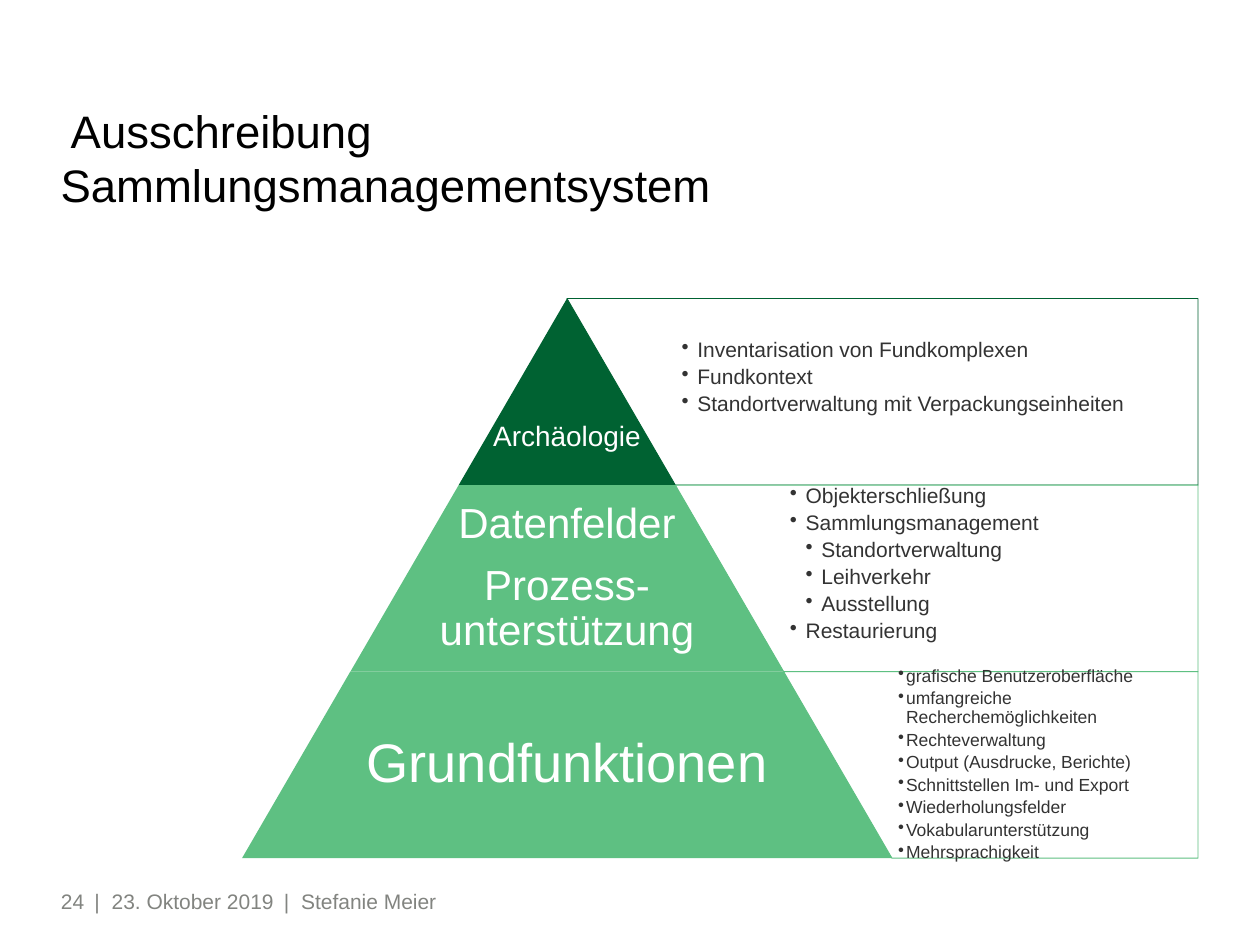
from lxml import etree
from pptx import Presentation
from pptx import util as u
from pptx.dml.color import RGBColor
from pptx.enum import shapes, text
from pptx.oxml.ns import qn

COLORS = {"black": "000000", "grey": "828480", "body": "333333",
          "white": "FFFFFF", "dark": "006232", "light": "5EC082"}
Pt = u.Pt


class SlideBuilder:
    font = "Arial"

    def __init__(self, slide):
        self.slide = slide

    def color(self, name):
        return RGBColor.from_string(COLORS[name])

    def shape(self, kind, box, fill, adjustments, line=None, rotation=0, alpha=None):
        shape = self.slide.shapes.add_shape(kind, *map(Pt, box))
        shape.shadow.inherit = False
        shape.rotation = rotation
        for index, value in enumerate(adjustments):
            shape.adjustments[index] = value
        shape.fill.solid()
        shape.fill.fore_color.rgb = self.color(fill)
        if alpha:
            fill_color = shape._element.spPr.find(qn("a:solidFill"))[0]
            etree.SubElement(fill_color, qn("a:alpha"), val=str(alpha * 1000))
        if line:
            shape.line.color.rgb = self.color(line)
            shape.line.width = Pt(0.5)
        else:
            shape.line.fill.background()

    def frame(self, box, anchor="MIDDLE", inset=0, extra_top=0, extra_bottom=0):
        frame = self.slide.shapes.add_textbox(*map(Pt, box)).text_frame
        frame.word_wrap = True
        frame.vertical_anchor = getattr(text.MSO_ANCHOR, anchor)
        frame.margin_left = frame.margin_right = Pt(inset)
        frame.margin_top = Pt(inset + extra_top)
        frame.margin_bottom = Pt(inset + extra_bottom)
        return frame

    def paragraphs(self, frame, lines, size, color, align="LEFT", spacing=None,
                   after=0, indent=0, tabs=()):
        """Each line is a (level, text) pair; an indent gives it a bullet."""
        for index, (level, words) in enumerate(lines):
            paragraph = frame.add_paragraph() if index else frame.paragraphs[0]
            paragraph.alignment = getattr(text.PP_ALIGN, align)
            paragraph.line_spacing = spacing
            paragraph.space_after = Pt(after)
            properties = paragraph._p.get_or_add_pPr()
            if indent:
                properties.set("marL", str(Pt(indent * (level + 1))))
                properties.set("indent", str(-Pt(indent)))
                etree.SubElement(properties, qn("a:buChar"), char="•")
            if tabs:
                tab_list = etree.SubElement(properties, qn("a:tabLst"))
                for position in tabs:
                    etree.SubElement(tab_list, qn("a:tab"), pos=str(Pt(position)), algn="l")
            run = paragraph.add_run()
            run.text = words
            run.font.size = Pt(size)
            run.font.name = self.font
            run.font.color.rgb = self.color(color)


# Pyramid geometry: every tier widens by one step on each side
APEX_X, TOP, TIER_HEIGHT, STEP, RIGHT = 324, 170.6, 106.6, 61.9, 684.6
SLOPE = STEP / TIER_HEIGHT

TIERS = [
    dict(color="dark", labels=["Archäologie"], label_size=16, label_share=1,
         label_drop=52, list_size=12, indent=9, list_lift=16,
         items=[(0, "Inventarisation von Fundkomplexen"), (0, "Fundkontext"),
                (0, "Standortverwaltung mit Verpackungseinheiten")]),
    dict(color="light", labels=["Datenfelder", "Prozess-unterstützung"],
         label_size=24, label_share=0.65, label_drop=0,
         list_size=12, indent=9, list_lift=16,
         items=[(0, "Objekterschließung"), (0, "Sammlungsmanagement"),
                (1, "Standortverwaltung"), (1, "Leihverkehr"),
                (1, "Ausstellung"), (0, "Restaurierung")]),
    dict(color="light", labels=["Grundfunktionen"], label_size=31,
         label_share=0.65, label_drop=0, list_size=10, indent=4.5, list_lift=0,
         items=[(0, "grafische Benutzeroberfläche"),
                (0, "umfangreiche Recherchemöglichkeiten"),
                (0, "Rechteverwaltung"), (0, "Output (Ausdrucke, Berichte)"),
                (0, "Schnittstellen Im- und Export"), (0, "Wiederholungsfelder"),
                (0, "Vokabularunterstützung"), (0, "Mehrsprachigkeit")]),
]


def add_tier(builder, index, tier):
    top = TOP + index * TIER_HEIGHT
    panel_left = APEX_X + index * STEP
    list_left = panel_left + STEP
    width = 2 * (index + 1) * STEP

    # Panel and its bullet list
    builder.shape(shapes.MSO_SHAPE.NON_ISOSCELES_TRAPEZOID,
                  (panel_left, top, RIGHT - panel_left, TIER_HEIGHT), "white",
                  (0, SLOPE), line=tier["color"], rotation=180, alpha=90)
    frame = builder.frame((list_left, top, RIGHT - list_left, TIER_HEIGHT),
                          inset=3.6, extra_bottom=tier["list_lift"])
    builder.paragraphs(frame, tier["items"], tier["list_size"], "body", spacing=0.9,
                       after=tier["list_size"] * 0.2, indent=tier["indent"])

    # Pyramid tier and its label
    builder.shape(shapes.MSO_SHAPE.TRAPEZOID,
                  (APEX_X - width / 2, top, width, TIER_HEIGHT), tier["color"], (SLOPE,))
    label_width = width * tier["label_share"]
    frame = builder.frame((APEX_X - label_width / 2, top, label_width, TIER_HEIGHT),
                          inset=2.2, extra_top=tier["label_drop"])
    builder.paragraphs(frame, [(0, label) for label in tier["labels"]],
                       tier["label_size"], "white", "CENTER", spacing=0.9,
                       after=tier["label_size"] * 0.4)


def main():
    presentation = Presentation()
    presentation.slide_width, presentation.slide_height = Pt(720), Pt(540)
    builder = SlideBuilder(presentation.slides.add_slide(presentation.slide_layouts[6]))

    # Title
    title = builder.frame((34.6, 27.4, 524.2, 93.6), "BOTTOM")
    builder.paragraphs(title, [(0, " Ausschreibung Sammlungsmanagementsystem")],
                       26, "black", spacing=Pt(31))

    # Footer
    footer = builder.frame((54, 490.3, 357, 49.7))
    builder.paragraphs(footer, [(0, "|\t23. Oktober 2019\t|\tStefanie Meier")],
                       12, "grey", tabs=(9.8, 108.3, 118.1))
    number = builder.frame((0, 490.3, 48.2, 49.7))
    builder.paragraphs(number, [(0, "24")], 12, "grey", "RIGHT")

    # Pyramid
    for index, tier in enumerate(TIERS):
        add_tier(builder, index, tier)

    presentation.save("out.pptx")


if __name__ == "__main__":
    main()
